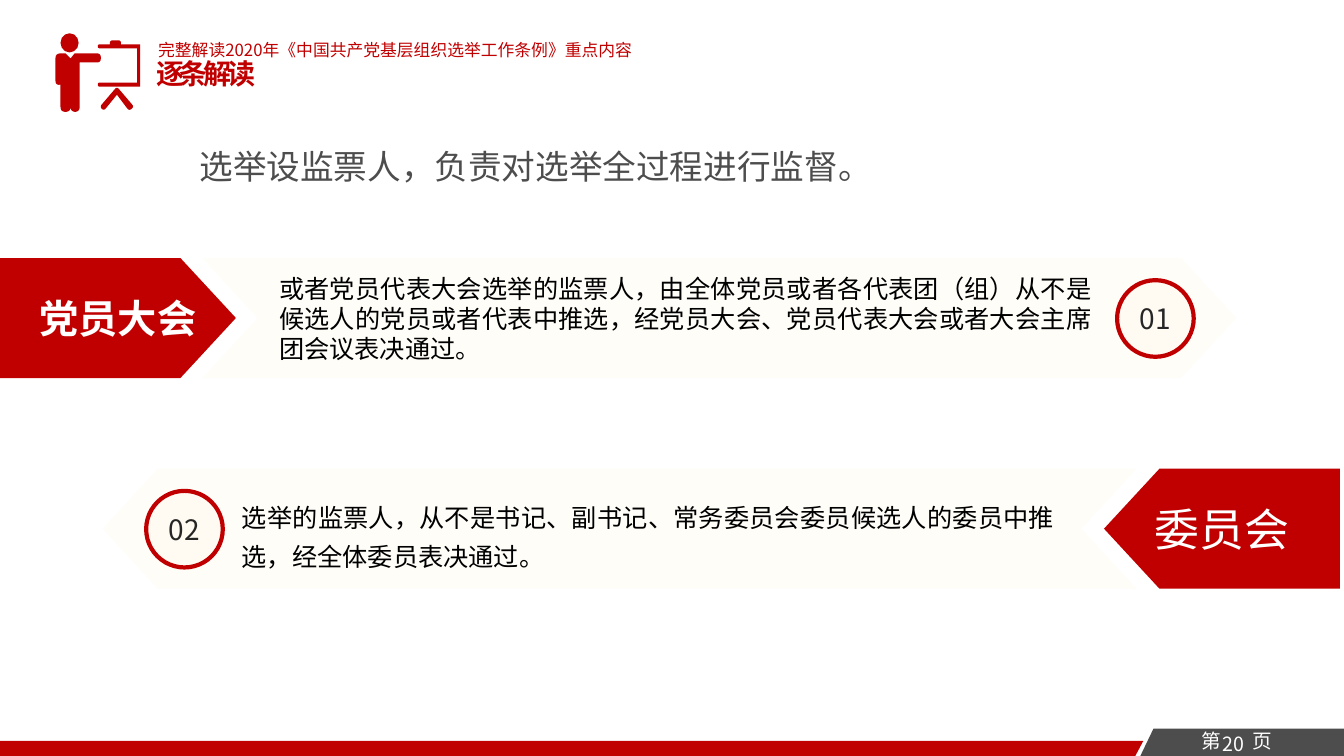
from math import dist

from pptx import Presentation
from pptx.dml.color import RGBColor
from pptx.enum.shapes import MSO_SHAPE as Shape
from pptx.enum.text import MSO_ANCHOR as Anchor, PP_ALIGN as Align
from pptx.oxml.ns import qn
from pptx.util import Inches, Pt
from lxml.etree import SubElement

FONT = "Noto Sans CJK SC"
RED = RGBColor(0xC0, 0x00, 0x00)
GREY = RGBColor(0x4D, 0x4D, 0x4D)
DARK = RGBColor(0x26, 0x26, 0x26)
BLACK = RGBColor(0x00, 0x00, 0x00)
WHITE = RGBColor(0xFF, 0xFF, 0xFF)
IVORY = RGBColor(0xFE, 0xFD, 0xF8)
CREAM = RGBColor(0xFF, 0xFB, 0xF3)


def write(shape, text, size, color, align=Align.LEFT, anchor=Anchor.TOP,
          bold=False, tracking=None, spacing=None, after=None, margins=None, tab=None):
    frame = shape.text_frame
    frame.word_wrap = True
    frame.vertical_anchor = anchor
    if margins is not None:
        frame.margin_left = frame.margin_right = Inches(margins)
        frame.margin_top = frame.margin_bottom = Inches(margins)
    para = frame.paragraphs[0]
    para.alignment = align
    if tab:
        indent, stop = tab
        props = para._p.get_or_add_pPr()
        props.set("marL", str(Inches(indent)))
        props.set("indent", "0")
        SubElement(SubElement(props, qn("a:tabLst")), qn("a:tab"),
                   pos=str(Inches(stop)), algn="l")
    if spacing:
        para.line_spacing = spacing
    if after:
        para.space_after = after
    span = para.add_run()
    span.text = text
    font = span.font
    font.name, font.size, font.bold = FONT, Pt(size), bold
    font.color.rgb = color
    props = span._r.get_or_add_rPr()
    SubElement(props, qn("a:ea"), typeface=FONT)
    if tracking:
        props.set("spc", str(tracking * 100))


def add_text(page, left, top, width, height, text, size, color, **style):
    box = page.shapes.add_textbox(Inches(left), Inches(top), Inches(width), Inches(height))
    write(box, text, size, color, **style)


def paint(shape, fill, line=None):
    shape.shadow.inherit = False
    shape.fill.solid()
    shape.fill.fore_color.rgb = fill
    if line:
        shape.line.color.rgb = line
        shape.line.width = Pt(3)
    else:
        shape.line.fill.background()
    return shape


def add_preset(page, kind, left, top, width, height, fill, line=None):
    shape = page.shapes.add_shape(kind, Inches(left), Inches(top), Inches(width), Inches(height))
    return paint(shape, fill, line)


def add_outline(page, left, top, points, fill):
    points = [(Inches(left + x), Inches(top + y)) for x, y in points]
    builder = page.shapes.build_freeform(*points[0], scale=1)
    builder.add_line_segments(points[1:], close=True)
    return paint(builder.convert_to_shape(), fill)


def round_corners(corners, steps=6):
    """Turn (x, y, radius) corners into points, easing each rounded corner."""
    points = []
    for i, (x, y, radius) in enumerate(corners):
        if not radius:
            points.append((x, y))
            continue
        ends = []
        for px, py, _ in (corners[i - 1], corners[(i + 1) % len(corners)]):
            share = radius / dist((x, y), (px, py))
            ends.append((x + (px - x) * share, y + (py - y) * share))
        (ax, ay), (bx, by) = ends
        for t in (step / steps for step in range(steps + 1)):
            points.append(((1 - t) ** 2 * ax + 2 * t * (1 - t) * x + t * t * bx,
                           (1 - t) ** 2 * ay + 2 * t * (1 - t) * y + t * t * by))
    return points


def add_presenter_icon(page, left, top):
    person = [(0.45, 0.2, 0.04), (0.19, 0.2, 0), (0.15, 0.25, 0), (0.1, 0.2, 0),
              (0, 0.2, 0.05), (0, 0.52, 0.05), (0.05, 0.51, 0), (0.05, 0.78, 0.05),
              (0.15, 0.78, 0.05), (0.15, 0.73, 0), (0.15, 0.78, 0.05),
              (0.24, 0.78, 0.05), (0.24, 0.29, 0), (0.45, 0.29, 0.04)]
    board = [(0.54, 0.11, 0), (0.54, 0.07, 0.03), (0.65, 0.07, 0.03), (0.65, 0.11, 0),
             (0.84, 0.11, 0), (0.84, 0.53, 0), (0.42, 0.53, 0.02), (0.42, 0.49, 0.02),
             (0.81, 0.49, 0), (0.81, 0.15, 0), (0.42, 0.15, 0.02), (0.42, 0.11, 0.02)]
    tripod = [(0.61, 0.53, 0.03), (0.78, 0.73, 0.03), (0.73, 0.77, 0.03),
              (0.61, 0.61, 0), (0.48, 0.77, 0.03), (0.44, 0.73, 0.03)]
    add_preset(page, Shape.OVAL, left + 0.05, top, 0.18, 0.19, RED)
    for part in (person, board, tripod):
        add_outline(page, left, top, round_corners(part), RED)


def add_header(page, left, top):
    add_presenter_icon(page, left, top)
    add_text(page, left + 0.9, top + 0.18, 1.45, 0.44, "逐条解读", 20, RED,
             align=Align.JUSTIFY, bold=True, tracking=-3)
    add_text(page, left + 0.92, top - 0.11, 7.69, 0.55,
             "完整解读2020年《中国共产党基层组织选举工作条例》重点内容", 12, RED,
             anchor=Anchor.MIDDLE)


def add_footer(page, top, width, height):
    strip = height - 0.15
    add_outline(page, 0, top, [(0, strip), (11.34, strip), (11.26, height), (0, height)], RED)
    add_outline(page, 0, top, [(11.44, 0), (width, 0), (width, height), (11.31, height)], GREY)
    add_text(page, 11.56, top, 1.51, 0.24, "第\t页", 14, WHITE, margins=0, tab=(0.36, 0.94))
    add_text(page, 11.37, top - 0.02, 1.73, 0.34, "20", 14, WHITE, align=Align.CENTER)


def add_band(page, left, top, number, badge_left, flipped=False):
    """Pale arrow with a numbered badge."""
    arrow = add_preset(page, Shape.NOTCHED_RIGHT_ARROW, left, top, 10.25, 1.19, IVORY)
    arrow.adjustments[0], arrow.adjustments[1] = 1, 0.46
    arrow.rotation = 180 if flipped else 0
    badge = add_preset(page, Shape.OVAL, left + badge_left, top + 0.22, 0.76, 0.76, CREAM, RED)
    write(badge, number, 20, DARK, align=Align.CENTER, anchor=Anchor.MIDDLE)


def add_tag(page, left, top, text, size, bold=False, flipped=False):
    """Red pointer that names who votes."""
    width, height, tip = 2.34, 1.19, 0.55
    points = [(0, 0), (width - tip, 0), (width, height / 2), (width - tip, height), (0, height)]
    if flipped:
        points = [(width - x, y) for x, y in points]
    tag = add_outline(page, left, top, points, RED)
    write(tag, text, size, WHITE, align=Align.CENTER, anchor=Anchor.MIDDLE, bold=bold)


def main():
    deck = Presentation()
    deck.slide_width, deck.slide_height = Inches(13.33), Inches(7.5)
    page = deck.slides.add_slide(deck.slide_layouts[6])

    add_footer(page, 7.23, 13.33, 0.27)
    add_header(page, 0.55, 0.33)
    add_text(page, 1.88, 1.49, 10.51, 0.41, "选举设监票人，负责对选举全过程进行监督。",
             24, GREY, spacing=Pt(22), after=Pt(5))

    # Party member assembly
    add_band(page, 2.01, 2.56, "01", 9.07)
    add_text(page, 2.67, 2.66, 8.26, 1.01,
             "或者党员代表大会选举的监票人，由全体党员或者各代表团（组）从不是候选人的党员或者代表中推选，"
             "经党员大会、党员代表大会或者大会主席团会议表决通过。", 18, BLACK, align=Align.JUSTIFY)
    add_tag(page, 0, 2.56, "党员大会", 28, bold=True)

    # Committee
    add_band(page, 1.02, 4.65, "02", 0.43, flipped=True)
    add_text(page, 2.3, 4.84, 8.26, 0.85,
             "选举的监票人，从不是书记、副书记、常务委员会委员候选人的委员中推选，经全体委员表决通过。",
             18, BLACK, align=Align.JUSTIFY, spacing=1.3)
    add_tag(page, 10.95, 4.65, "委员会", 32, flipped=True)

    deck.save("out.pptx")


if __name__ == "__main__":
    main()
